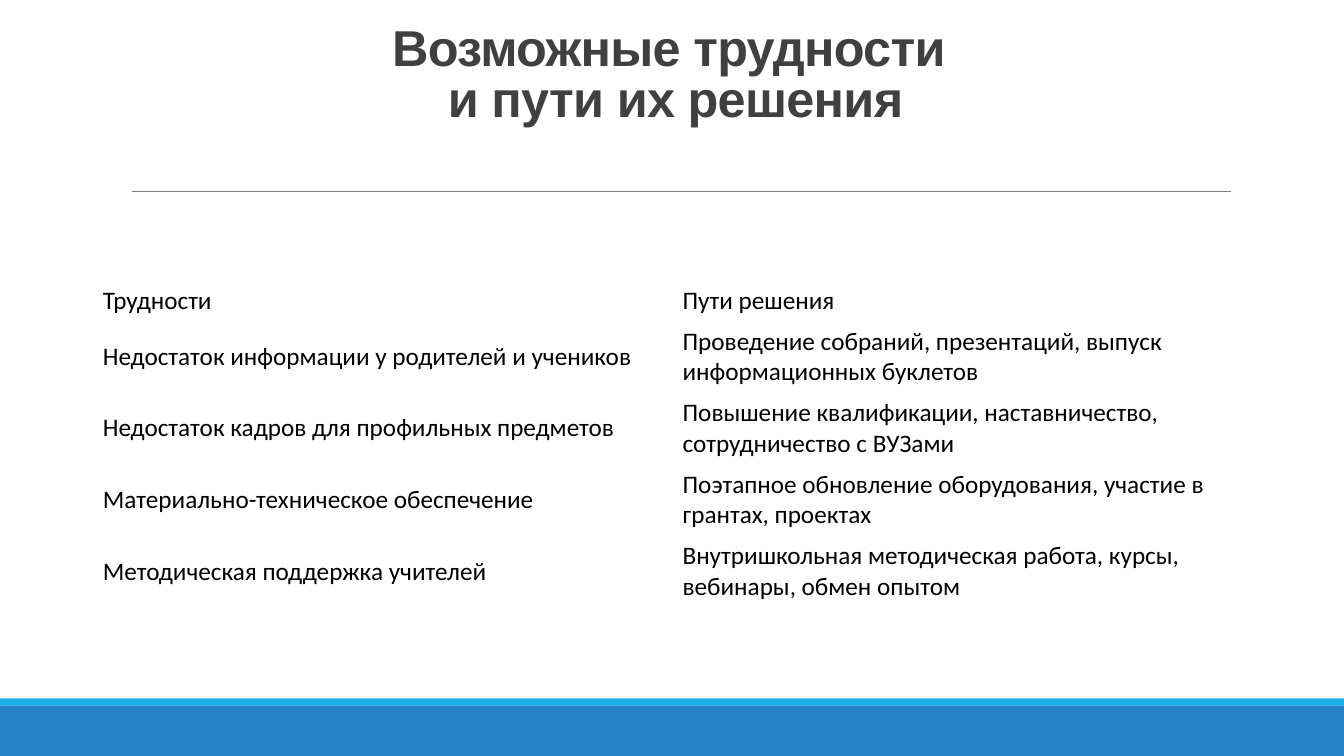
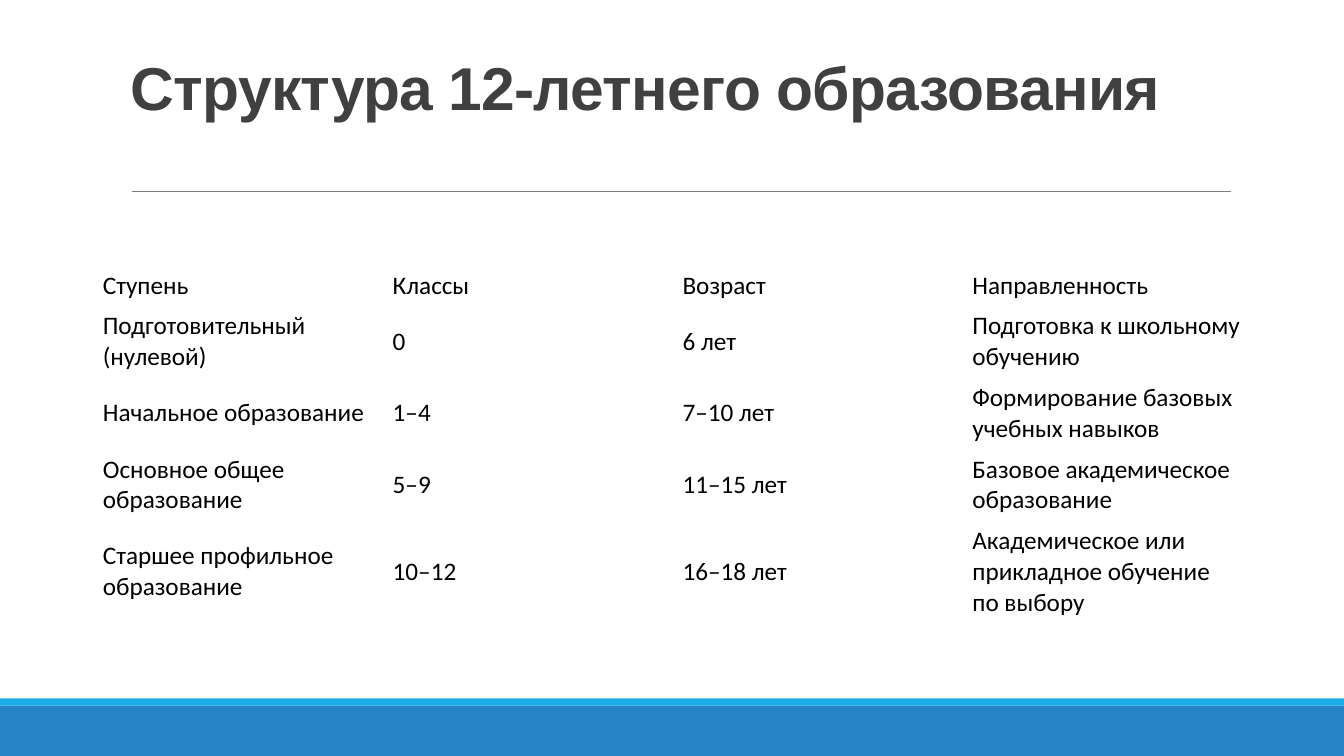
from dataclasses import dataclass

from lxml import etree
from pptx import Presentation
from pptx import util as u
from pptx.dml.color import RGBColor
from pptx.enum import shapes, text
from pptx.oxml.ns import qn


@dataclass(frozen=True)
class Theme:
    band: RGBColor = RGBColor(0x26, 0x83, 0xC6)
    stripe: RGBColor = RGBColor(0x1C, 0xAD, 0xE4)
    rule: RGBColor = RGBColor(0x80, 0x80, 0x80)
    title: RGBColor = RGBColor(0x40, 0x40, 0x40)
    body: RGBColor = RGBColor(0, 0, 0)
    title_font: str = "Arial"
    body_font: str = "Calibri"
    body_size: float = 18


THEME = Theme()
WIDTH, HEIGHT = u.Inches(13.33), u.Inches(7.5)
BAND_TOP, STRIPE_TOP = u.Inches(7), u.Inches(6.93)
RULE_LEFT, RULE_RIGHT, RULE_Y = u.Inches(1.31), u.Inches(12.21), u.Inches(1.9)
TITLE_LEFT, TITLE_TOP, TITLE_WIDTH = u.Inches(1.2), u.Inches(0.31), u.Inches(11)
TABLE_LEFT, TABLE_WIDTH = u.Inches(0.92), u.Inches(11.5)
LINE_HEIGHT, CELL_PADDING = 0.305, 0.1

SLIDES = [
    dict(
        title=["Возможные трудности ", "и пути их решения"],
        size=36, align=text.PP_ALIGN.CENTER, title_gap=0.63,
        table_top=2.78, row_lines=[1, 2, 2, 2, 2],
        rows=[
            ["Трудности", "Пути решения"],
            ["Недостаток информации у родителей и учеников",
             "Проведение собраний, презентаций, выпуск информационных буклетов"],
            ["Недостаток кадров для профильных предметов",
             "Повышение квалификации, наставничество, сотрудничество с ВУЗами"],
            ["Материально-техническое обеспечение",
             "Поэтапное обновление оборудования, участие в грантах, проектах"],
            ["Методическая поддержка учителей",
             "Внутришкольная методическая работа, курсы, вебинары, обмен опытом"],
        ],
    ),
    dict(
        title=["Структура 12-летнего образования"],
        size=43.2, align=text.PP_ALIGN.LEFT, title_gap=0.74,
        table_top=2.63, row_lines=[1, 2, 2, 2, 3],
        rows=[
            ["Ступень", "Классы", "Возраст", "Направленность"],
            ["Подготовительный (нулевой)", "0", "6 лет",
             "Подготовка к школьному обучению"],
            ["Начальное образование", "1–4", "7–10 лет",
             "Формирование базовых учебных навыков"],
            ["Основное общее образование", "5–9", "11–15 лет",
             "Базовое академическое образование"],
            ["Старшее профильное образование", "10–12", "16–18 лет",
             "Академическое или прикладное обучение по выбору"],
        ],
    ),
]


def add_run(p, words, font, size, color, bold=False):
    r = p.add_run()
    r.text = words
    for name, value in dict(name=font, size=u.Pt(size), bold=bold).items():
        setattr(r.font, name, value)
    r.font.color.rgb = color
    return r


def add_frame(s):
    """Draw the bottom bands and the rule under the title."""
    for top, bottom, color in [(BAND_TOP, HEIGHT, THEME.band),
                               (STRIPE_TOP, BAND_TOP, THEME.stripe)]:
        sp = s.shapes.add_shape(shapes.MSO_SHAPE.RECTANGLE, 0, top, WIDTH, bottom - top)
        sp.shadow.inherit = False
        sp.fill.solid()
        sp.fill.fore_color.rgb = color
        sp.line.fill.background()
    rule = s.shapes.add_connector(shapes.MSO_CONNECTOR.STRAIGHT,
                                  RULE_LEFT, RULE_Y, RULE_RIGHT, RULE_Y)
    rule.line.color.rgb = THEME.rule
    rule.line.width = u.Pt(0.5)
    etree.SubElement(rule.element.spPr, qn("a:effectLst"))


prs = Presentation()
prs.slide_width, prs.slide_height = WIDTH, HEIGHT

for content in SLIDES:
    s = prs.slides.add_slide(prs.slide_layouts[6])
    add_frame(s)

    title = s.shapes.add_textbox(TITLE_LEFT, TITLE_TOP, TITLE_WIDTH, RULE_Y - TITLE_TOP)
    tf = title.text_frame
    for name, value in dict(word_wrap=True, vertical_anchor=text.MSO_ANCHOR.BOTTOM,
                            margin_top=0,
                            margin_bottom=u.Inches(content["title_gap"])).items():
        setattr(tf, name, value)
    p = tf.paragraphs[0]
    p.alignment = content["align"]
    p.line_spacing = 0.85
    for i, words in enumerate(content["title"]):
        if i:
            p.add_line_break()
        r = add_run(p, words, THEME.title_font, content["size"], THEME.title, bold=True)
        r.font.element.set("spc", "-50") if hasattr(r.font, "element") else \
            r._r.get_or_add_rPr().set("spc", "-50")

    rows = content["rows"]
    heights = [u.Inches(CELL_PADDING + LINE_HEIGHT * n) for n in content["row_lines"]]
    table = s.shapes.add_table(len(rows), len(rows[0]), TABLE_LEFT,
                               u.Inches(content["table_top"]),
                               TABLE_WIDTH, sum(heights)).table
    table.first_row = table.horz_banding = False
    for row, height, entries in zip(table.rows, heights, rows):
        row.height = height
        for cell, words in zip(row.cells, entries):
            cell.fill.background()
            cell.vertical_anchor = text.MSO_ANCHOR.MIDDLE
            add_run(cell.text_frame.paragraphs[0], words,
                    THEME.body_font, THEME.body_size, THEME.body)

prs.save("out.pptx")
